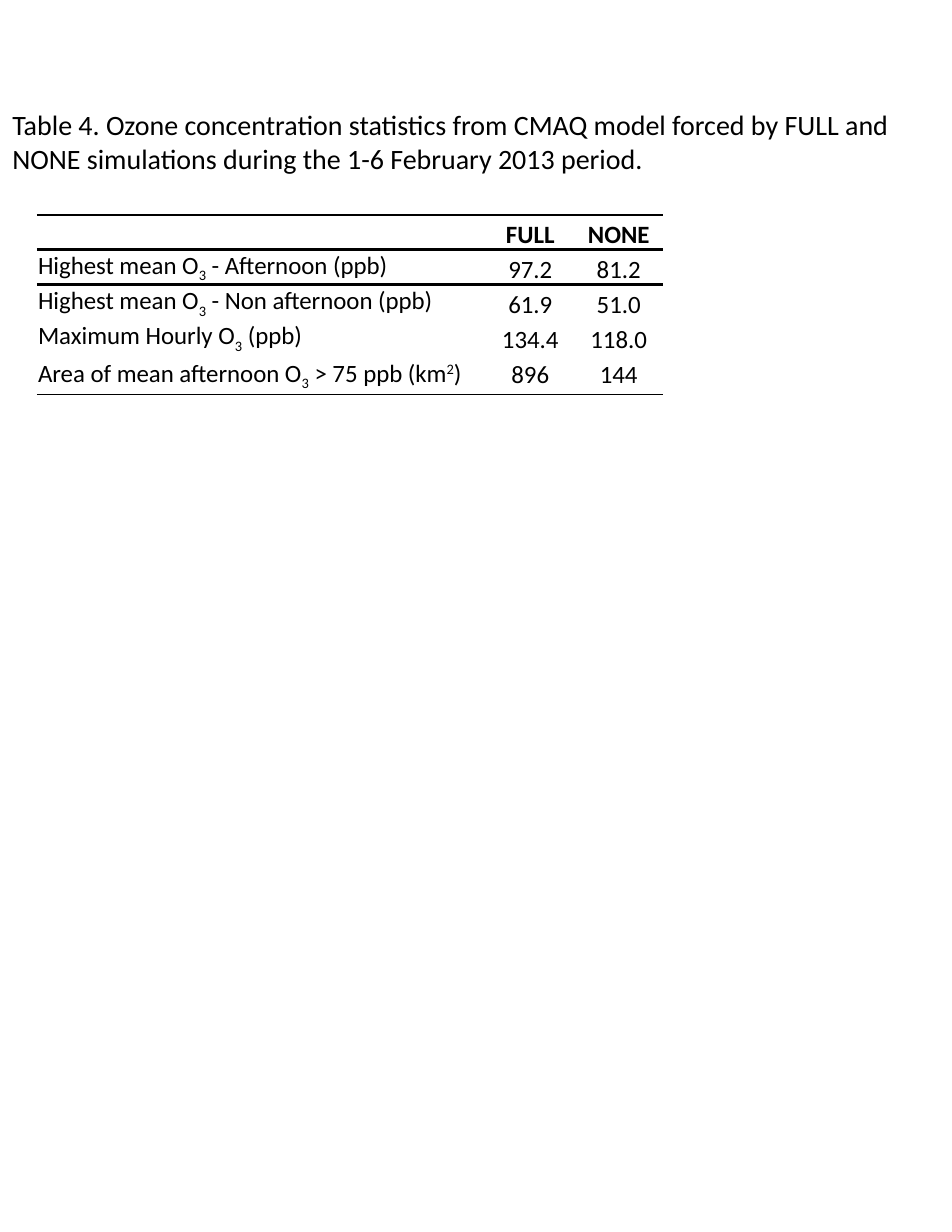
from lxml import etree
from pptx import Presentation
from pptx.dml.color import RGBColor
from pptx.enum.text import MSO_ANCHOR, MSO_AUTO_SIZE, PP_ALIGN
from pptx.oxml.ns import qn
from pptx.util import Inches, Pt

BLACK = RGBColor(0, 0, 0)
LEFT, CENTER = PP_ALIGN.LEFT, PP_ALIGN.CENTER
TOP, MIDDLE, BOTTOM = MSO_ANCHOR.TOP, MSO_ANCHOR.MIDDLE, MSO_ANCHOR.BOTTOM
GROW = MSO_AUTO_SIZE.SHAPE_TO_FIT_TEXT
THIN, THICK = 1, 2.25
SUB, SUPER = -25000, 30000

CAPTION = ("Table 4. Ozone concentration statistics from CMAQ model forced by FULL and "
           "NONE simulations during the 1-6 February 2013 period.")
OZONE = [("O", 0), ("3", SUB)]
ROWS = [
    ([], "FULL", "NONE"),
    ([("Highest mean ", 0), *OZONE, (" - Afternoon (ppb)", 0)], "97.2", "81.2"),
    ([("Highest mean ", 0), *OZONE, (" - Non afternoon (ppb)", 0)], "61.9", "51.0"),
    ([("Maximum Hourly ", 0), *OZONE, (" (ppb)", 0)], "134.4", "118.0"),
    ([("Area of mean afternoon ", 0), *OZONE, (" > 75 ppb (km", 0), ("2", SUPER), (")", 0)],
     "896", "144"),
]
RULES = [THIN, THICK, THICK, None, None, THIN]
COLUMN_WIDTHS = [4.01, 0.79, 0.79]
ROW_HEIGHTS = [0.31, 0.31, 0.31, 0.31, 0.35]


class StatisticsPage:
    """Holds the text style and the current slide, and adds its caption and table."""

    def __init__(self, deck, font_name="Calibri", color=BLACK):
        self.page = deck.slides.add_slide(deck.slide_layouts[5])
        self.font_name = font_name
        self.color = color

    def style(self, para, size, bold=False, align=LEFT):
        para.alignment = align
        para.font.name = self.font_name
        para.font.size = Pt(size)
        para.font.bold = bold
        para.font.color.rgb = self.color

    def caption(self, text, left, top, width, height):
        box = self.page.shapes.title
        box.left, box.top = Inches(left), Inches(top)
        box.width, box.height = Inches(width), Inches(height)
        frame = box.text_frame
        frame.text = text
        frame.word_wrap = True
        frame.auto_size = GROW
        frame.vertical_anchor = TOP
        frame.margin_left = frame.margin_right = Inches(0.11)
        frame.margin_top = frame.margin_bottom = Inches(0.06)
        self.style(frame.paragraphs[0], 18)

    def borders(self, cell, above, below):
        properties = cell._tc.get_or_add_tcPr()
        sides = [("a:lnL", None), ("a:lnR", None), ("a:lnT", above), ("a:lnB", below)]
        for position, (tag, weight) in enumerate(sides):
            line = etree.Element(qn(tag))
            properties.insert(position, line)
            if weight is None:
                etree.SubElement(line, qn("a:noFill"))
                continue
            line.set("w", str(Pt(weight)))
            fill = etree.SubElement(line, qn("a:solidFill"))
            etree.SubElement(fill, qn("a:srgbClr"), val=str(self.color))

    def cell(self, cell, spans, anchor, bold, align):
        cell.fill.background()
        cell.vertical_anchor = anchor
        cell.margin_left = cell.margin_right = cell.margin_top = Inches(0.01)
        cell.margin_bottom = 0
        para = cell.text_frame.paragraphs[0]
        self.style(para, 16, bold, align)
        for text, baseline in spans:
            span = para.add_run()
            span.text = text
            if baseline:
                span.font._element.set("baseline", str(baseline))

    def table(self, rows, left, top):
        frame = self.page.shapes.add_table(
            len(rows), len(COLUMN_WIDTHS), Inches(left), Inches(top),
            Inches(sum(COLUMN_WIDTHS)), Inches(sum(ROW_HEIGHTS)))
        table = frame.table
        table.first_row = table.horz_banding = False
        for column, width in zip(table.columns, COLUMN_WIDTHS):
            column.width = Inches(width)
        for index, (label, *values) in enumerate(rows):
            table.rows[index].height = Inches(ROW_HEIGHTS[index])
            anchor = MIDDLE if index == len(rows) - 1 else BOTTOM
            contents = [label] + [[(value, 0)] for value in values]
            for column, spans in enumerate(contents):
                cell = table.cell(index, column)
                self.cell(cell, spans, anchor, index == 0, CENTER if column else LEFT)
                self.borders(cell, RULES[index], RULES[index + 1])


def main():
    deck = Presentation()
    deck.slide_width, deck.slide_height = Inches(8.5), Inches(11)
    statistics = StatisticsPage(deck)
    statistics.caption(CAPTION, 0, 0.9, 8.52, 0.72)
    statistics.table(ROWS, 0.33, 1.92)
    deck.save("out.pptx")


if __name__ == "__main__":
    main()
